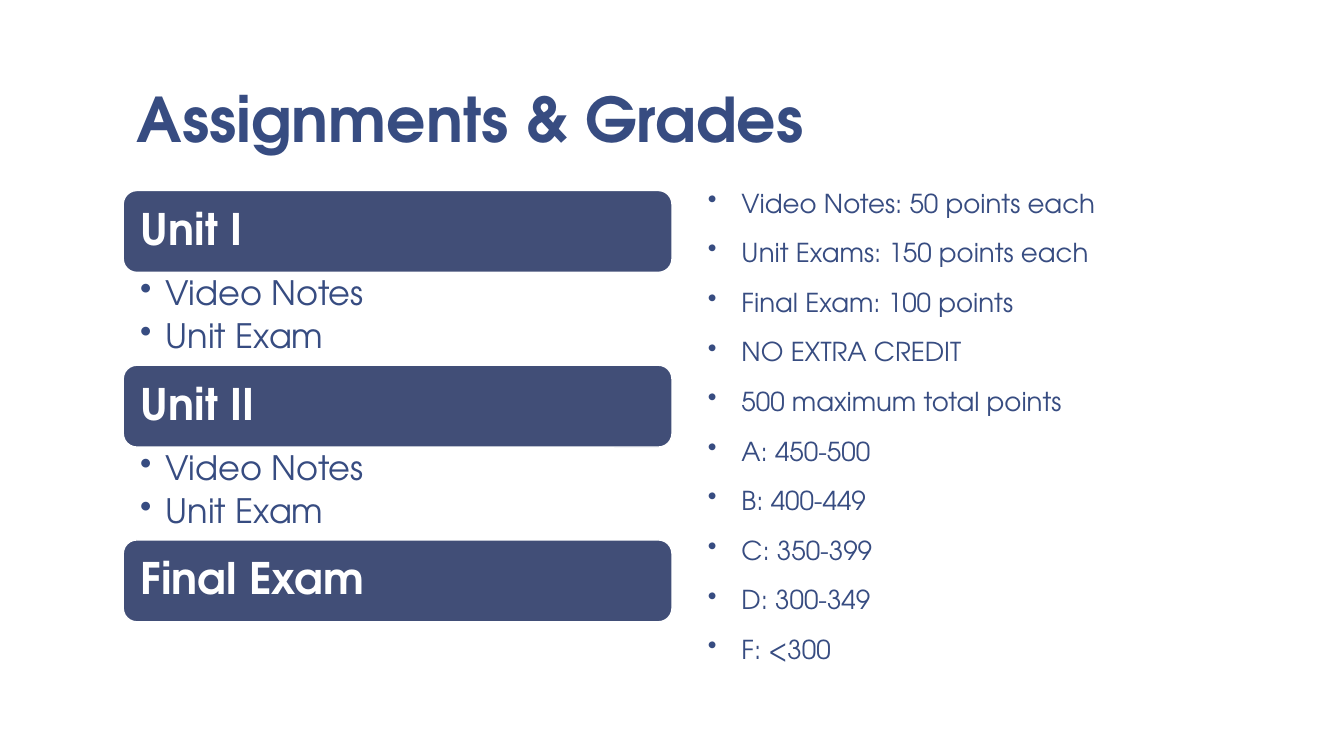
import dataclasses

import lxml.etree
import pptx
import pptx.dml.color
import pptx.enum.shapes
import pptx.enum.text
import pptx.oxml.ns
import pptx.util

SLIDE_WIDTH = pptx.util.Inches(13.33)
SLIDE_HEIGHT = pptx.util.Inches(7.5)
COLUMNS = 120
ROWS = 90
FONT = "TeX Gyre Adventor"
COLORS = {"ink": "374C81", "bar": "414E77", "paper": "FFFFFF"}

UNIT_LEFT = 11
UNIT_WIDTH = 49
UNIT_TOP = 22.68
UNIT_PITCH = 20.8
BAR_HEIGHT = 9.75


@dataclasses.dataclass(frozen=True)
class Area:
    column: float
    row: float
    width: float
    height: float


@dataclasses.dataclass(frozen=True)
class TextStyle:
    size: float
    color: str = "ink"
    bold: bool = False
    line_spacing: float = 0.9
    space_before: float = 0
    space_after: float = 0
    indent: float = 0
    insets: tuple[float, float, float, float] = (1.2, 0.84, 1.2, 0.84)
    anchor: str = "TOP"


@dataclasses.dataclass(frozen=True)
class Unit:
    name: str
    tasks: tuple[str, ...] = ()


TITLE = TextStyle(44, bold=True, line_spacing=0.85, anchor="BOTTOM")
UNIT_NAME = TextStyle(31, color="paper", bold=True, anchor="MIDDLE",
                      insets=(1.2, 1.5, 1.2, 1.5))
TASK = TextStyle(24, space_after=4.8, indent=2.25,
                 insets=(1.5, 0.5, 2.16, 0.5))
GRADING = TextStyle(18.6, line_spacing=0.75, space_before=18.7, indent=3)

UNITS = (
    Unit("Unit I", ("Video Notes", "Unit Exam")),
    Unit("Unit II", ("Video Notes", "Unit Exam")),
    Unit("Final Exam"),
)
GRADING_RULES = (
    "Video Notes: 50 points each",
    "Unit Exams: 150 points each",
    "Final Exam: 100 points",
    "NO EXTRA CREDIT",
    "500 maximum total points",
    "A: 450-500",
    "B: 400-449",
    "C: 350-399",
    "D: 300-349",
    "F: <300",
)


def across(columns: float) -> int:
    return round(SLIDE_WIDTH * columns / COLUMNS)


def down(rows: float) -> int:
    return round(SLIDE_HEIGHT * rows / ROWS)


def place(area: Area) -> tuple[int, int, int, int]:
    return (across(area.column), down(area.row),
            across(area.width), down(area.height))


def color(name: str) -> pptx.dml.color.RGBColor:
    return pptx.dml.color.RGBColor.from_string(COLORS[name])


def add_bullet(paragraph, indent: float) -> None:
    properties = paragraph._p.get_or_add_pPr()
    properties.set("marL", str(across(indent)))
    properties.set("indent", str(-across(indent)))
    bullet = lxml.etree.SubElement(properties, pptx.oxml.ns.qn("a:buChar"))
    bullet.set("char", "•")


def write(shape, lines: tuple[str, ...], style: TextStyle) -> None:
    frame = shape.text_frame
    frame.word_wrap = True
    frame.vertical_anchor = pptx.enum.text.MSO_ANCHOR[style.anchor]
    left, top, right, bottom = style.insets
    frame.margin_left, frame.margin_right = across(left), across(right)
    frame.margin_top, frame.margin_bottom = down(top), down(bottom)
    frame.text = "\n".join(lines)
    for index, paragraph in enumerate(frame.paragraphs):
        if style.indent:
            add_bullet(paragraph, style.indent)
        paragraph.alignment = pptx.enum.text.PP_ALIGN.LEFT
        paragraph.line_spacing = style.line_spacing
        paragraph.space_before = pptx.util.Pt(style.space_before if index else 0)
        paragraph.space_after = pptx.util.Pt(style.space_after)
        for run in paragraph.runs:
            run.font.name = FONT
            run.font.size = pptx.util.Pt(style.size)
            run.font.bold = style.bold
            run.font.color.rgb = color(style.color)


def add_text(slide, area: Area, lines: tuple[str, ...], style: TextStyle) -> None:
    write(slide.shapes.add_textbox(*place(area)), lines, style)


def add_unit(slide, unit: Unit, row: float) -> None:
    bar = slide.shapes.add_shape(
        pptx.enum.shapes.MSO_SHAPE.ROUNDED_RECTANGLE,
        *place(Area(UNIT_LEFT, row, UNIT_WIDTH, BAR_HEIGHT)))
    bar.shadow.inherit = False
    bar.fill.solid()
    bar.fill.fore_color.rgb = color("bar")
    bar.line.color.rgb = color("paper")
    bar.line.width = pptx.util.Pt(1)
    write(bar, (unit.name,), UNIT_NAME)
    if unit.tasks:
        tasks_area = Area(UNIT_LEFT, row + BAR_HEIGHT,
                          UNIT_WIDTH, UNIT_PITCH - BAR_HEIGHT)
        add_text(slide, tasks_area, unit.tasks, TASK)


def main() -> None:
    deck = pptx.Presentation()
    deck.slide_width = SLIDE_WIDTH
    deck.slide_height = SLIDE_HEIGHT
    slide = deck.slides.add_slide(deck.slide_layouts[6])
    slide.background.fill.solid()
    slide.background.fill.fore_color.rgb = color("paper")
    add_text(slide, Area(11, 1, 100, 18.36), ("Assignments & Grades",), TITLE)
    for index, unit in enumerate(UNITS):
        add_unit(slide, unit, UNIT_TOP + index * UNIT_PITCH)
    add_text(slide, Area(62, 22.3, 49, 58.7), GRADING_RULES, GRADING)
    deck.save("out.pptx")


if __name__ == "__main__":
    main()
